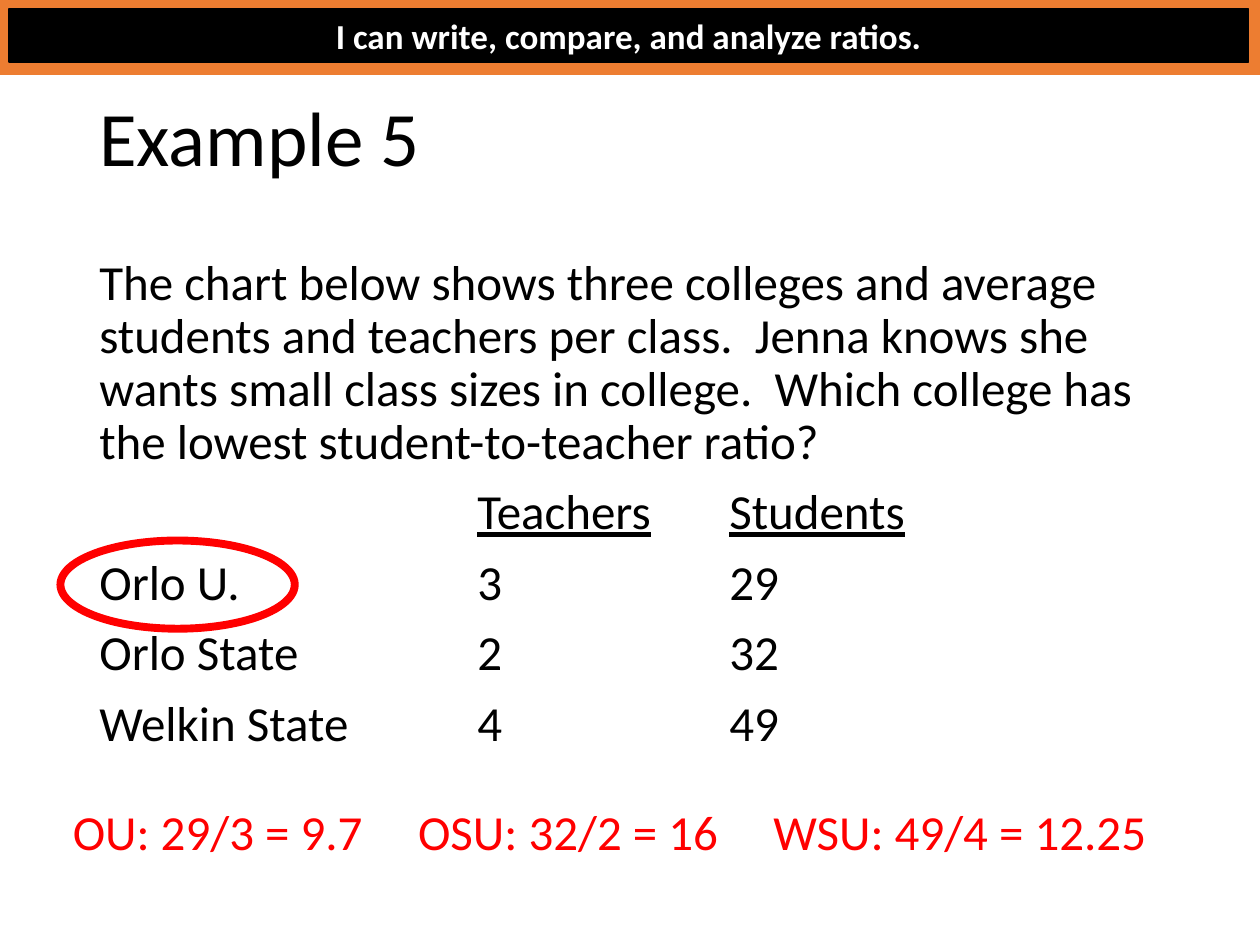
from dataclasses import dataclass

from lxml.etree import SubElement
from pptx import Presentation
from pptx.dml.color import RGBColor
from pptx.enum.shapes import MSO_SHAPE
from pptx.enum.text import MSO_ANCHOR, PP_ALIGN
from pptx.oxml.ns import qn
from pptx.util import Inches, Pt

COLUMNS, ROWS = 100, 75
CELL = Inches(0.1)


@dataclass(frozen=True)
class Theme:
    font: str = "Calibri"
    ink: str = "000000"
    paper: str = "FFFFFF"
    band: str = "ED7D31"
    answer: str = "FF0000"
    title_size: int = 44
    body_size: int = 28
    goal_size: int = 20


THEME = Theme()

QUESTION = (
    "The chart below shows three colleges and average students and teachers "
    "per class.  Jenna knows she wants small class sizes in college.  "
    "Which college has the lowest student-to-teacher ratio?"
)
COLLEGES = [("Orlo U.", 3, 29), ("Orlo State", 2, 32), ("Welkin State", 4, 49)]
RATIOS = ["OU: 29/3 = 9.7", "OSU: 32/2 = 16", "WSU: 49/4 = 12.25"]
COLLEGE_TABS = (30, 50)
RATIO_TABS = (27.4, 55.6)


def grid(*cells):
    """Turn grid cells into slide lengths."""
    return [round(cell * CELL) for cell in cells]


def add_tab_stops(para, stops):
    tab_list = SubElement(para._p.get_or_add_pPr(), qn("a:tabLst"))
    for position in grid(*stops):
        SubElement(tab_list, qn("a:tab"), pos=str(position), algn="l")


def write(frame, text, *, size=THEME.body_size, color=THEME.ink, bold=False,
          underline=False, align=PP_ALIGN.LEFT, line_spacing=None,
          space_before=0, tabs=()):
    """Add a paragraph; underlining skips the tabs between its entries."""
    first = frame.paragraphs[0]
    para = first if not first.runs else frame.add_paragraph()
    para.alignment = align
    para.space_before = Pt(space_before)
    if line_spacing:
        para.line_spacing = line_spacing
    if tabs:
        add_tab_stops(para, tabs)
    for piece in (text.replace("\t", "\n\t\n").split("\n") if underline else [text]):
        if not piece:
            continue
        span = para.add_run()
        span.text = piece
        span.font.name = THEME.font
        span.font.size = Pt(size)
        span.font.bold = bold
        span.font.underline = underline and piece != "\t"
        span.font.color.rgb = RGBColor.from_string(color)


def add_text_box(slide, *cells, anchor=MSO_ANCHOR.TOP):
    frame = slide.shapes.add_textbox(*grid(*cells)).text_frame
    frame.word_wrap = True
    frame.vertical_anchor = anchor
    return frame


def add_outline_shape(slide, kind, *cells, line, width=1, fill=None):
    shape = slide.shapes.add_shape(kind, *grid(*cells))
    shape.shadow.inherit = False
    if fill:
        shape.fill.solid()
        shape.fill.fore_color.rgb = RGBColor.from_string(fill)
    else:
        shape.fill.background()
    shape.line.color.rgb = RGBColor.from_string(line)
    shape.line.width = Pt(width)
    return shape


def add_goal_banner(slide):
    add_outline_shape(slide, MSO_SHAPE.RECTANGLE, 0, 0, COLUMNS, 5.9,
                      fill=THEME.band, line=THEME.band)
    bar = add_outline_shape(slide, MSO_SHAPE.RECTANGLE, 0.7, 0.7, 98.4, 4.2,
                            fill=THEME.ink, line=THEME.ink)
    bar.text_frame.word_wrap = True
    bar.text_frame.vertical_anchor = MSO_ANCHOR.MIDDLE
    write(bar.text_frame, "I can write, compare, and analyze ratios.",
          size=THEME.goal_size, color=THEME.paper, bold=True,
          align=PP_ALIGN.CENTER)


def add_problem(slide):
    frame = add_text_box(slide, 6.9, 20, 86.2, 47.6)
    spacing = {"line_spacing": 0.9, "space_before": 10}
    write(frame, QUESTION, **spacing)
    write(frame, "\tTeachers\tStudents", underline=True, tabs=COLLEGE_TABS, **spacing)
    for college in COLLEGES:
        write(frame, "\t".join(map(str, college)), tabs=COLLEGE_TABS, **spacing)


def main():
    deck = Presentation()
    deck.slide_width, deck.slide_height = grid(COLUMNS, ROWS)
    slide = deck.slides.add_slide(deck.slide_layouts[6])

    title = add_text_box(slide, 6.9, 4, 86.2, 14.5, anchor=MSO_ANCHOR.MIDDLE)
    write(title, "Example 5", size=THEME.title_size, line_spacing=0.9)
    add_problem(slide)
    add_goal_banner(slide)

    ratios = add_text_box(slide, 4.8, 63.1, 89.3, 5.7)
    write(ratios, "\t".join(RATIOS), color=THEME.answer, tabs=RATIO_TABS)
    add_outline_shape(slide, MSO_SHAPE.OVAL, 4.8, 42.9, 18.6, 7,
                      line=THEME.answer, width=4.5)
    deck.save("out.pptx")


if __name__ == "__main__":
    main()
